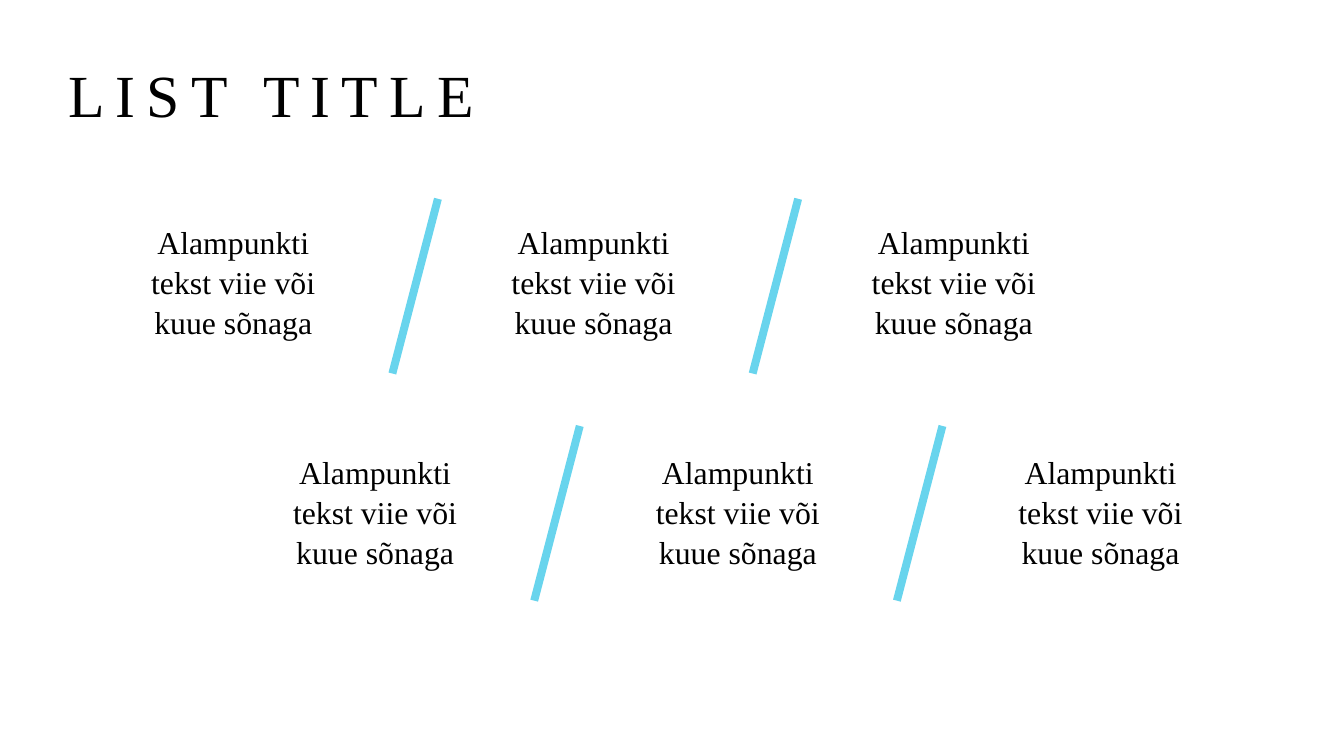
from dataclasses import dataclass

from lxml import etree
from pptx import Presentation
from pptx.dml.color import RGBColor
from pptx.enum import shapes, text
from pptx.oxml import ns
from pptx.util import Pt


@dataclass(frozen=True)
class Theme:
    font: str = "Times New Roman"
    ink: RGBColor = RGBColor(0, 0, 0)
    blue: RGBColor = RGBColor(0x68, 0xD4, 0xED)
    head: float = 32
    body: float = 17
    track: float = 6
    rule: float = 4.25


THEME = Theme()
ITEM = ["Alampunkti", "tekst viie või", "kuue sõnaga"]


def add_text(slide, box, lines, size, align, lead=1.0):
    shape = slide.shapes.add_textbox(*map(Pt, box))
    frame = shape.text_frame
    frame.word_wrap = True
    frame.vertical_anchor = text.MSO_ANCHOR.MIDDLE
    frame.text = "\n".join(lines)
    for para in frame.paragraphs:
        para.alignment = align
        para.line_spacing = lead
        para.font.name = THEME.font
        para.font.size = Pt(size)
        para.font.color.rgb = THEME.ink
    return frame


def add_slash(slide, left, top, width, height):
    line = slide.shapes.add_connector(
        shapes.MSO_CONNECTOR.STRAIGHT,
        Pt(left + width), Pt(top), Pt(left), Pt(top + height))
    line.line.color.rgb = THEME.blue
    line.line.width = Pt(THEME.rule)
    etree.SubElement(line._element.spPr, ns.qn("a:effectLst"))


def add_title(slide, box, words):
    frame = add_text(slide, box, [words], THEME.head, text.PP_ALIGN.LEFT)
    # Wide letter spacing, in hundredths of a point
    props = frame.paragraphs[0].runs[0].font._element
    props.set("spc", str(int(THEME.track * 100)))


def add_row(slide, box, items, pitch, drop):
    """Place items at an equal pitch, with a slash between neighbours."""
    left, top, width, height = box
    for i, lines in enumerate(items):
        x = left + i * pitch
        frame = add_text(slide, (x, top + drop, width, 69), lines,
                         THEME.body, text.PP_ALIGN.CENTER, 1.05)
        frame.auto_size = text.MSO_AUTO_SIZE.SHAPE_TO_FIT_TEXT
        if i < len(items) - 1:
            add_slash(slide, x + 144.2, top, 24.4, height)


def main():
    deck = Presentation()
    deck.slide_width, deck.slide_height = Pt(720), Pt(405)
    slide = deck.slides.add_slide(deck.slide_layouts[6])

    # Heading
    add_title(slide, (29.5, 16.5, 659, 67), "LIST TITLE")

    # Two staggered rows of items
    add_row(slide, (66, 106.5, 118, 93.6), [ITEM] * 3, 193, 9.5)
    add_row(slide, (142, 228.2, 118, 93.6), [ITEM] * 3, 194.3, 10.8)

    deck.save("out.pptx")


if __name__ == "__main__":
    main()
